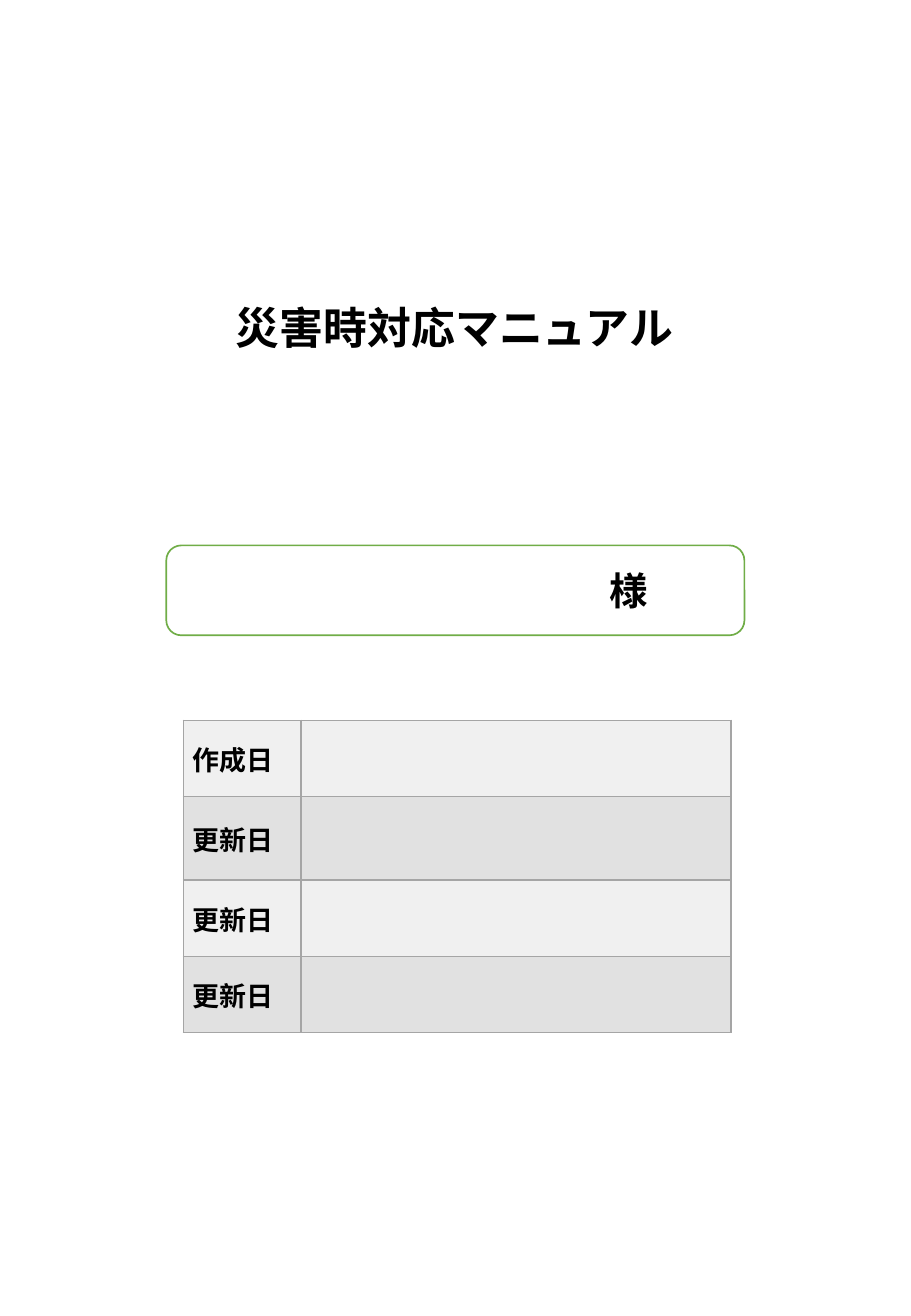
from lxml import etree
from pptx import Presentation
from pptx.dml.color import RGBColor
from pptx.enum import shapes, text
from pptx.oxml import ns
from pptx.util import Pt

BLACK, WHITE, GREEN, GREY = "000000", "FFFFFF", "70AD47", "A5A5A5"
BANDS = ("F0F0F0", "E1E1E1")
JAPANESE, LATIN = "Noto Sans CJK JP", "Calibri"


def colour(value):
    return RGBColor.from_string(value)


def add_borders(cell, value, width):
    """Give all four edges of a table cell the same solid line."""
    properties = cell._tc.get_or_add_tcPr()
    for index, edge in enumerate(("lnL", "lnR", "lnT", "lnB")):
        line = etree.Element(ns.qn(f"a:{edge}"), w=str(Pt(width)))
        fill = etree.SubElement(line, ns.qn("a:solidFill"))
        etree.SubElement(fill, ns.qn("a:srgbClr"), val=value)
        properties.insert(index, line)


class Cover:
    def __init__(self, slide):
        self.shapes = slide.shapes

    def set_words(self, frame, words, size, font, align):
        frame.text = words
        paragraph = frame.paragraphs[0]
        paragraph.alignment = align
        for run in paragraph.runs:
            run.font.size = Pt(size)
            run.font.bold = True
            run.font.name = font
            run.font.color.rgb = colour(BLACK)
            east_asian = etree.Element(ns.qn("a:ea"), typeface=JAPANESE)
            run.font._rPr.find(ns.qn("a:latin")).addnext(east_asian)

    def title(self, words, left, top, width, height):
        frame = self.shapes.add_textbox(Pt(left), Pt(top), Pt(width), Pt(height)).text_frame
        frame.word_wrap = True
        frame.vertical_anchor = text.MSO_ANCHOR.MIDDLE
        self.set_words(frame, words, 26, JAPANESE, text.PP_ALIGN.CENTER)

    def name_field(self, honorific, left, top, width, height, right_gap):
        """Draw a rounded box with room for a name before the honorific."""
        box = self.shapes.add_shape(shapes.MSO_SHAPE.ROUNDED_RECTANGLE,
                                    Pt(left), Pt(top), Pt(width), Pt(height))
        box.shadow.inherit = False
        box.fill.solid()
        box.fill.fore_color.rgb = colour(WHITE)
        box.line.color.rgb = colour(GREEN)
        box.line.width = Pt(1)
        box.text_frame.margin_right = Pt(right_gap)
        box.text_frame.vertical_anchor = text.MSO_ANCHOR.MIDDLE
        self.set_words(box.text_frame, honorific, 22.8, LATIN, text.PP_ALIGN.RIGHT)

    def date_table(self, labels, left, top, widths, heights):
        table = self.shapes.add_table(len(labels), len(widths), Pt(left), Pt(top),
                                      Pt(sum(widths)), Pt(sum(heights))).table
        table.first_row = False
        for column, width in zip(table.columns, widths):
            column.width = Pt(width)
        for index, (row, label, height) in enumerate(zip(table.rows, labels, heights)):
            row.height = Pt(height)
            for cell in row.cells:
                cell.fill.solid()
                cell.fill.fore_color.rgb = colour(BANDS[index % 2])
                cell.vertical_anchor = text.MSO_ANCHOR.MIDDLE
                cell.margin_left = cell.margin_right = Pt(5.6)
                cell.margin_top = cell.margin_bottom = Pt(2.8)
                add_borders(cell, GREY, 1)
            self.set_words(row.cells[0].text_frame, label, 16, LATIN, text.PP_ALIGN.LEFT)


def main():
    deck = Presentation()
    deck.slide_width, deck.slide_height = Pt(540), Pt(780)
    cover = Cover(deck.slides.add_slide(deck.slide_layouts[6]))
    cover.title("災害時対応マニュアル", 131, 174.2, 277.2, 38.9)
    cover.name_field("様", 98.6, 323.3, 342.7, 53.3, right_gap=54.8)
    cover.date_table(["作成日"] + ["更新日"] * 3, 108.7, 427,
                     widths=(69.6, 255), heights=(45.2, 49.5, 45.2, 45.2))
    deck.save("out.pptx")


if __name__ == "__main__":
    main()
